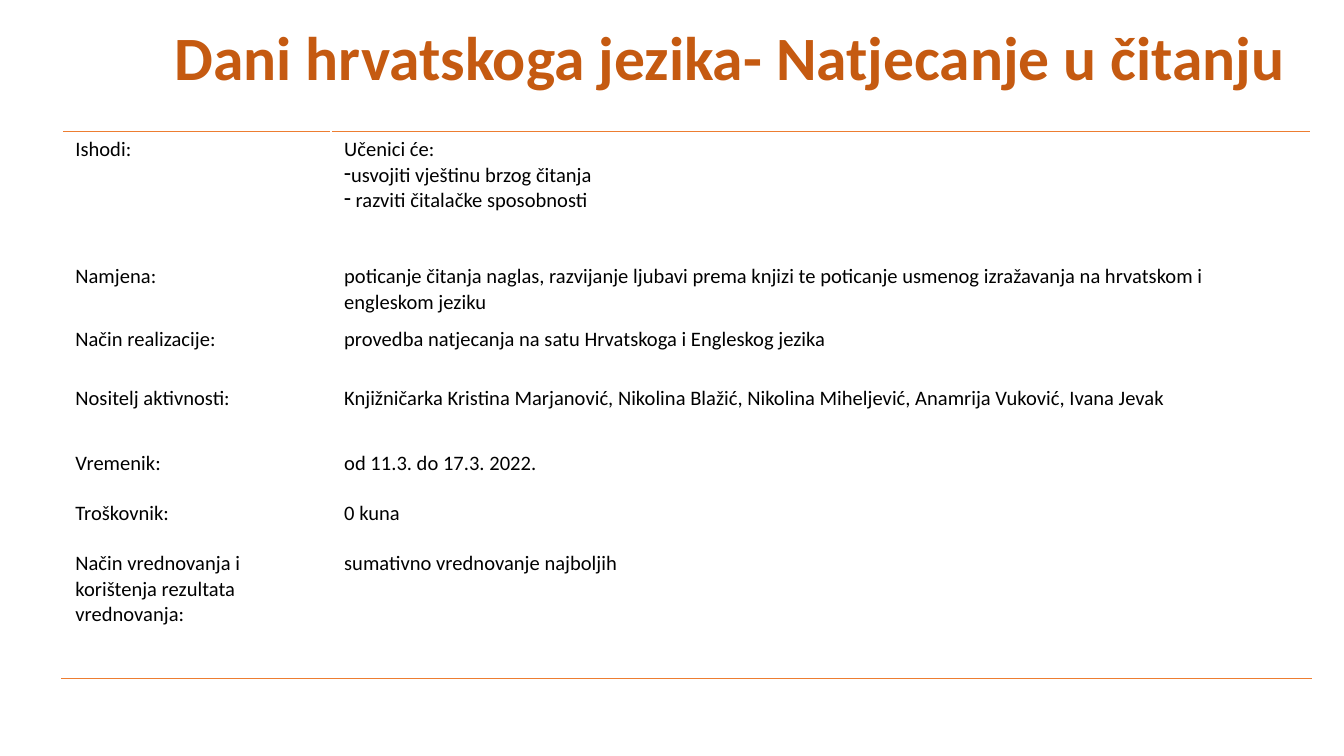
from dataclasses import dataclass

from lxml import etree
from pptx import Presentation
from pptx import util as u
from pptx.dml.color import RGBColor
from pptx.enum import text
from pptx.oxml import ns


@dataclass(frozen=True)
class Theme:
    """Colours, font and type sizes of the slide."""
    font: str = "Calibri"
    heading: str = "C55A11"
    body: str = "000000"
    rule: str = "ED7D31"
    heading_size: float = 33
    body_size: float = 11


THEME = Theme()
COLUMN_WIDTHS = (144, 525)
ACTIVITY = [
    (68, "Ishodi:", ["Učenici će:\u00a0", "-usvojiti vještinu brzog čitanja",
                     "- razviti čitalačke sposobnosti"]),
    (33.5, "Namjena:", ["poticanje čitanja naglas, razvijanje ljubavi prema knjizi te "
                        "poticanje usmenog izražavanja na hrvatskom i engleskom jeziku"]),
    (32, "Način realizacije:", ["provedba natjecanja na satu Hrvatskoga i Engleskog jezika"]),
    (34.8, "Nositelj aktivnosti:", ["Knjižničarka Kristina Marjanović, Nikolina Blažić, "
                                    "Nikolina Miheljević, Anamrija Vuković, Ivana Jevak"]),
    (26.8, "Vremenik:", ["od 11.3. do 17.3. 2022."]),
    (26.8, "Troškovnik:", ["0 kuna"]),
    (71.2, "Način vrednovanja i korištenja rezultata vrednovanja:",
     ["sumativno vrednovanje najboljih"]),
]


def style_font(font, size, colour, bold=False):
    """Apply the theme font with a size, colour and weight."""
    font.name = THEME.font
    font.size = u.Pt(size)
    font.bold = bold
    font.color.rgb = RGBColor.from_string(colour)


def add_heading(slide, wording):
    """Place and format the slide title."""
    heading = slide.shapes.title
    heading.left, heading.top = u.Pt(86.4), u.Pt(-1.4)
    heading.width, heading.height = u.Pt(627), u.Pt(67.7)
    frame = heading.text_frame
    frame.text = wording
    frame.word_wrap = True
    frame.auto_size = text.MSO_AUTO_SIZE.NONE
    frame.vertical_anchor = text.MSO_ANCHOR.MIDDLE
    frame.margin_left = frame.margin_right = u.Pt(7.2)
    frame.margin_top = frame.margin_bottom = u.Pt(7.2)
    line = frame.paragraphs[0]
    line.alignment = text.PP_ALIGN.LEFT
    line.line_spacing = 0.9
    style_font(line.runs[0].font, THEME.heading_size, THEME.heading, bold=True)


def add_dash(paragraph):
    """Give a paragraph a dash bullet without any indent."""
    properties = paragraph._p.get_or_add_pPr()
    properties.set("marL", "0")
    properties.set("indent", "0")
    etree.SubElement(properties, ns.qn("a:buChar"), char="-")


def fill_cell(cell, lines):
    """Write lines into a clear cell, turning leading dashes into bullets."""
    cell.fill.background()
    cell.margin_left = cell.margin_right = u.Pt(7.2)
    cell.margin_top = cell.margin_bottom = u.Pt(3)
    frame = cell.text_frame
    for index, wording in enumerate(lines):
        paragraph = frame.add_paragraph() if index else frame.paragraphs[0]
        paragraph.text = wording.removeprefix("-")
        if wording.startswith("-"):
            add_dash(paragraph)
        style_font(paragraph.runs[0].font, THEME.body_size, THEME.body)


def add_rule(cell, side):
    """Draw a one-point border on a cell's top (lnT) or bottom (lnB)."""
    rule = etree.Element(ns.qn(f"a:{side}"), w=str(u.Pt(1)))
    fill = etree.SubElement(rule, ns.qn("a:solidFill"))
    etree.SubElement(fill, ns.qn("a:srgbClr"), val=THEME.rule)
    cell._tc.get_or_add_tcPr().insert(0, rule)


def add_activity_table(slide):
    """Add the activity plan with a rule above and below it."""
    height = sum(row_height for row_height, _, _ in ACTIVITY)
    plan = slide.shapes.add_table(
        len(ACTIVITY), len(COLUMN_WIDTHS), u.Pt(33.2), u.Pt(70.5),
        u.Pt(sum(COLUMN_WIDTHS)), u.Pt(height)).table
    plan.first_row = plan.horz_banding = False
    for column, width in zip(plan.columns, COLUMN_WIDTHS):
        column.width = u.Pt(width)
    for index, (row_height, label, details) in enumerate(ACTIVITY):
        plan.rows[index].height = u.Pt(row_height)
        fill_cell(plan.cell(index, 0), [label])
        fill_cell(plan.cell(index, 1), details)
    for column in range(len(COLUMN_WIDTHS)):
        add_rule(plan.cell(0, column), "lnT")
        add_rule(plan.cell(len(ACTIVITY) - 1, column), "lnB")


def main():
    """Build and save the slide."""
    deck = Presentation()
    deck.slide_width, deck.slide_height = u.Pt(720), u.Pt(405)
    slide = deck.slides.add_slide(deck.slide_layouts.get_by_name("Title Only"))
    add_activity_table(slide)
    add_heading(slide, "Dani hrvatskoga jezika- Natjecanje u čitanju")
    deck.save("out.pptx")


if __name__ == "__main__":
    main()
